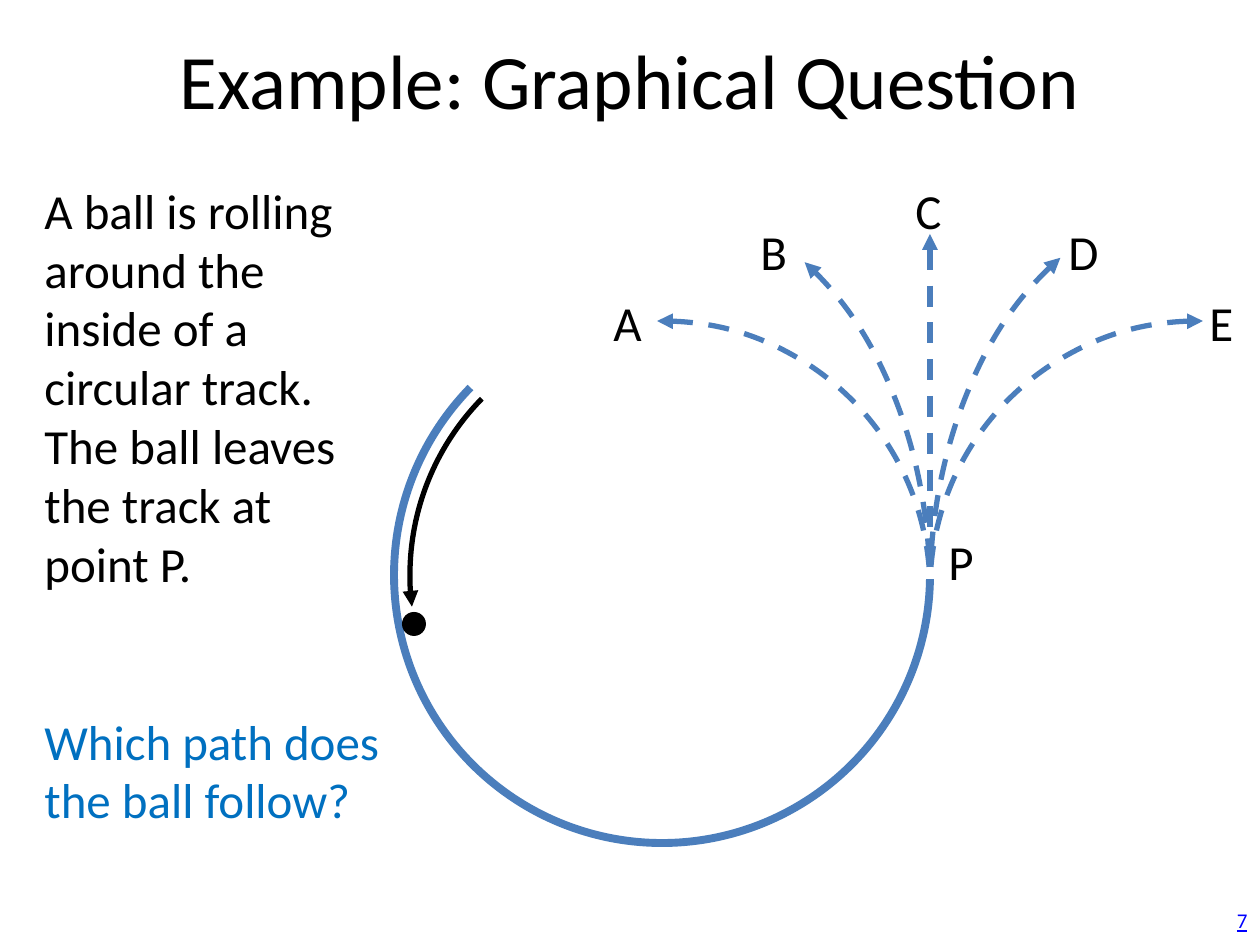
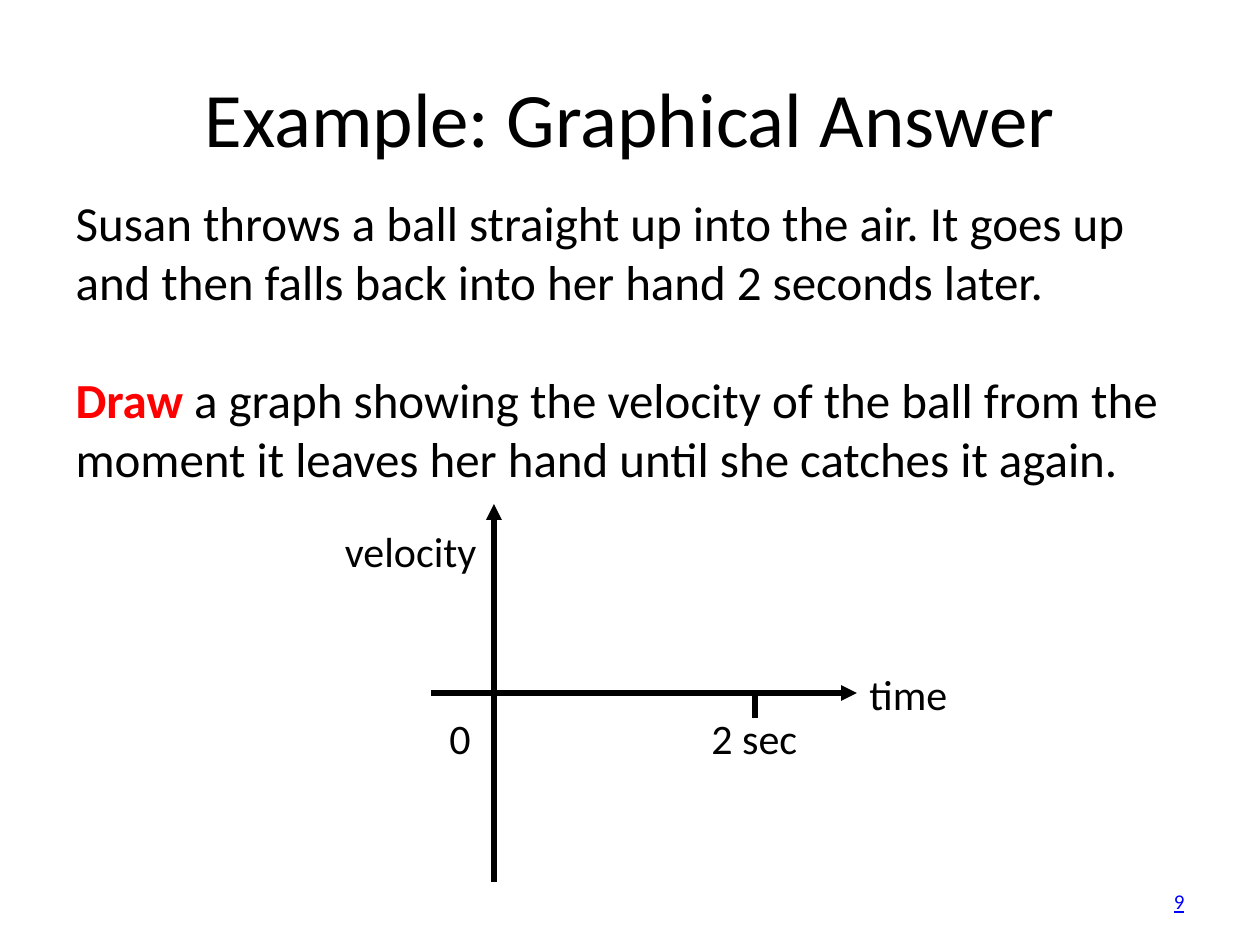
from lxml.etree import SubElement
from pptx import Presentation
from pptx.dml.color import RGBColor
from pptx.enum.dml import MSO_LINE
from pptx.enum.shapes import MSO_CONNECTOR, MSO_SHAPE
from pptx.enum.text import MSO_ANCHOR, MSO_AUTO_SIZE, PP_ALIGN
from pptx.oxml.ns import qn
from pptx.util import Emu, Inches, Pt

PX = 914400 / 126
FONT = "Calibri"
BLACK, TRACK, QUESTION, ALERT, LINK = "000000", "4B7EBC", "0070C0", "FF0000", "0000FF"
TITLE_ONLY, TITLE_AND_BODY = 5, 1


def px(*lengths):
    """Turn px lengths into EMU."""
    return [Emu(round(length * PX)) for length in lengths]


def color(hex_code):
    """Turn a hex string into a colour."""
    return RGBColor.from_string(hex_code)


def write(frame, text, size=28, fill=BLACK, bold=False, underline=False,
          align=PP_ALIGN.LEFT, before=0, joined=False):
    """Add formatted text as a paragraph, or join it to the last one."""
    paragraph = frame.paragraphs[-1]
    if paragraph.runs and not joined:
        paragraph = frame.add_paragraph()
    if not joined:
        paragraph.alignment = align
        paragraph.space_before = Pt(before)
    run = paragraph.add_run()
    run.text = text
    font = run.font
    font.name, font.size, font.bold, font.underline = FONT, Pt(size), bold, underline
    font.color.rgb = color(fill)
    return paragraph


def text_area(slide, box, wrap=True, anchor=MSO_ANCHOR.TOP):
    """Add an empty text box and return its frame."""
    frame = slide.shapes.add_textbox(*px(*box)).text_frame
    frame.word_wrap = wrap
    frame.vertical_anchor = anchor
    return frame


def label(slide, text, left, top, width=54, height=72, **style):
    """Add a one-line label."""
    write(text_area(slide, (left, top, width, height), wrap=False), text, **style)


def place(holder, box):
    """Move a placeholder and return its frame."""
    holder.left, holder.top, holder.width, holder.height = px(*box)
    holder.text_frame.auto_size = MSO_AUTO_SIZE.NONE
    return holder.text_frame


def new_slide(deck, layout, title, title_top, number, number_box):
    """Start a slide with its title and page number."""
    slide = deck.slides.add_slide(deck.slide_layouts[layout])
    heading = place(slide.shapes.title, (63, title_top, 1134, 158))
    heading.vertical_anchor = MSO_ANCHOR.MIDDLE
    write(heading, title, size=44, align=PP_ALIGN.CENTER)
    footer = text_area(slide, number_box, anchor=MSO_ANCHOR.MIDDLE)
    write(footer, number, size=12, fill=LINK, underline=True, align=PP_ALIGN.RIGHT)
    return slide


def stroke(shape, stroke_color, width=3, dashed=False, arrow=None):
    """Style an outline; arrow is headEnd, tailEnd or None."""
    shape.line.color.rgb = color(stroke_color)
    shape.line.width = Pt(width)
    if dashed:
        shape.line.dash_style = MSO_LINE.DASH
    if arrow:
        outline = shape.element.spPr.find(qn("a:ln"))
        SubElement(outline, qn("a:" + arrow), type="triangle")


def arc(slide, box, start, end, stroke_color=TRACK, flipped=False, **style):
    """Add an arc between two angles in degrees."""
    curve = slide.shapes.add_shape(MSO_SHAPE.ARC, *px(*box))
    curve.shadow.inherit = False
    curve.fill.background()
    for index, angle in enumerate((start, end)):
        curve.adjustments[index] = angle * 0.6
    if flipped:
        curve.element.spPr.find(qn("a:xfrm")).set("flipH", "1")
    stroke(curve, stroke_color, **style)


def straight(slide, ends, stroke_color=BLACK, **style):
    """Add a straight line between two points."""
    line = slide.shapes.add_connector(MSO_CONNECTOR.STRAIGHT, *px(*ends))
    stroke(line, stroke_color, **style)
    SubElement(line.element.spPr, qn("a:effectLst"))


def question_slide(deck):
    """Build the slide with the circular track."""
    slide = new_slide(deck, TITLE_ONLY, "Example: Graphical Question", 0,
                      "7", (966, 895, 294, 50))
    problem = text_area(slide, (32, 174, 362, 660))
    story = write(problem, "A ball is rolling around the inside of a circular track. "
                           "The ball leaves the track at point P.")
    story.line_spacing = 1.0
    write(problem, "Which path does the ball follow?", fill=QUESTION, before=68)

    left, exit_x, diameter = 394, 930, 536
    arc(slide, (left, 307, diameter, diameter), 0.88, 224.38, width=4.5)
    ball = slide.shapes.add_shape(MSO_SHAPE.OVAL, *px(402, 612, 24, 24))
    ball.shadow.inherit = False
    ball.fill.solid()
    ball.fill.fore_color.rgb = color(BLACK)
    ball.line.fill.background()

    paths = [
        (left, 321, 536, 268.95, 358.52, False),
        (left, 203, 772, 293.59, 352.26, False),
        (exit_x, 203, 772, 292.56, 352.26, True),
        (exit_x, 321, 536, 268.95, 356.85, True),
    ]
    for x, top, height, start, end, flipped in paths:
        arc(slide, (x, top, diameter, height), start, end,
            flipped=flipped, dashed=True, arrow="headEnd")
    straight(slide, (exit_x, 234, exit_x, 546), TRACK, dashed=True, arrow="headEnd")
    arc(slide, (410, 323, 504, 504), 172.77, 224.38, BLACK, arrow="headEnd")

    for name, x, top in [("P", 936, 525), ("A", 601, 286), ("B", 748, 215),
                         ("C", 903, 174), ("D", 1056, 215), ("E", 1197, 286)]:
        label(slide, name, x, top)


def answer_slide(deck):
    """Build the slide with the empty velocity graph."""
    slide = new_slide(deck, TITLE_AND_BODY, "Example: Graphical Answer", 38,
                      "9", (903, 876, 294, 50))
    task = place(slide.placeholders[1], (63, 186, 1134, 693))
    story = write(task, "Susan throws a ball straight up into the air. It goes up "
                        "and then falls back into her hand 2 seconds later.")
    order = write(task, "Draw", fill=ALERT, bold=True, before=34)
    write(task, " a graph showing the velocity of the ball from the moment "
                "it leaves her hand until she catches it again.", joined=True)
    for paragraph in (story, order):
        properties = paragraph._p.get_or_add_pPr()
        properties.set("marL", "0")
        properties.set("indent", "0")
        SubElement(properties, qn("a:buNone"))

    origin_x, origin_y, tick_x = 494, 693, 755
    straight(slide, (431, origin_y, 857, origin_y), arrow="tailEnd")
    straight(slide, (origin_x, 882, origin_x, 504), arrow="tailEnd")
    straight(slide, (tick_x, origin_y, tick_x, 718))
    label(slide, "time", 857, 662, 105, 64, size=24)
    label(slide, "velocity", 330, 519, 159, 64, size=24, align=PP_ALIGN.RIGHT)
    label(slide, "2 sec", 699, 706, 112, 64, size=24)
    label(slide, "0", 437, 706, 47, 64, size=24)


def main():
    """Build and save the deck."""
    deck = Presentation()
    deck.slide_width, deck.slide_height = Inches(10), Inches(7.5)
    question_slide(deck)
    answer_slide(deck)
    deck.save("out.pptx")


if __name__ == "__main__":
    main()
